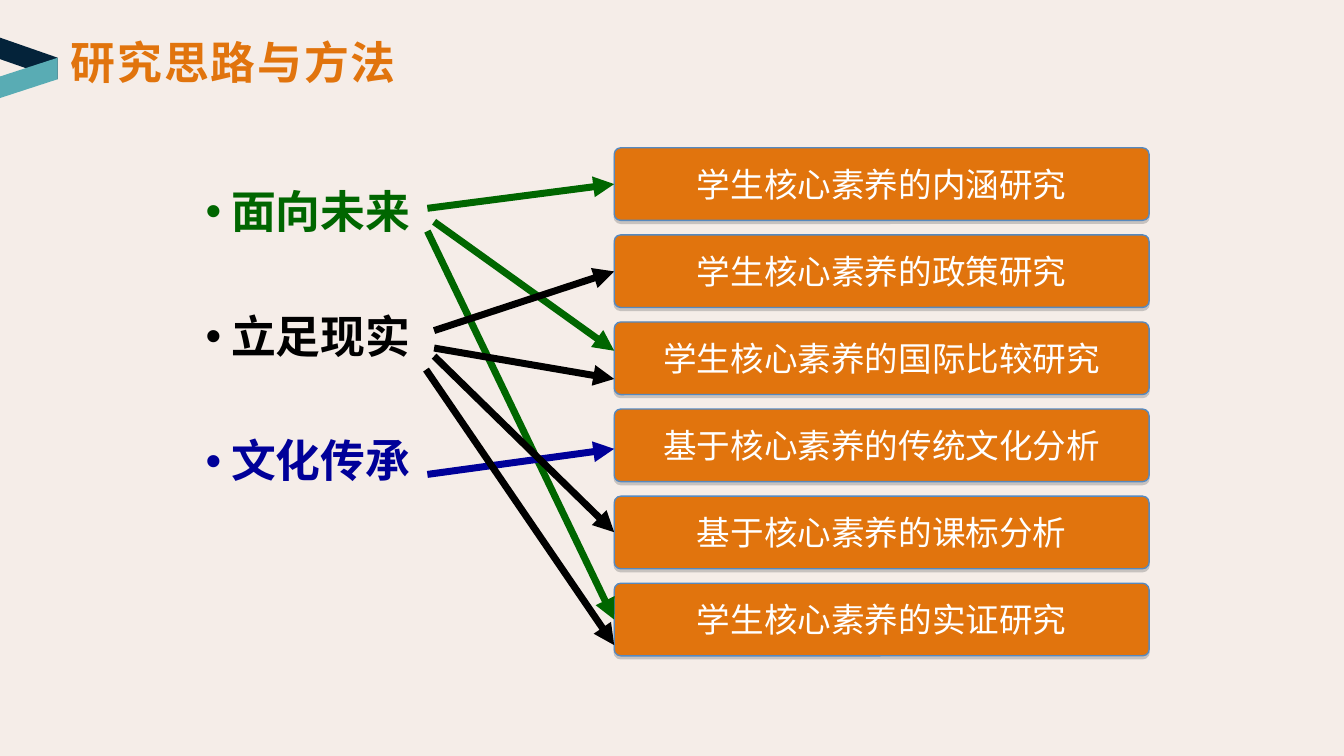
from lxml.etree import SubElement
from pptx import Presentation
from pptx.dml.color import RGBColor
from pptx.enum.shapes import MSO_CONNECTOR as Connector, MSO_SHAPE as Shape
from pptx.enum.text import MSO_ANCHOR as Anchor, MSO_AUTO_SIZE as AutoSize, PP_ALIGN as Align
from pptx.oxml.ns import qn
from pptx.util import Inches, Pt

COLORS = {
    "background": "F5EDE8", "orange": "E1740D", "outline": "5689BF",
    "shadow": "808080", "white": "FFFFFF", "navy": "04233A", "teal": "59ACB4",
    "future": "006600", "reality": "000000", "culture": "000099",
}
CJK_FONT = "Noto Sans CJK SC"
TITLE_FONT = "Times New Roman"


def rgb(name):
    return RGBColor.from_string(COLORS[name])


class SlideBuilder:
    def __init__(self, slide):
        self.slide = slide
        self.shapes = slide.shapes
        fill = slide.background.fill
        fill.solid()
        fill.fore_color.rgb = rgb("background")

    def run(self, paragraph, text, size, color, bold=False, font=CJK_FONT):
        run = paragraph.add_run()
        run.text = text
        run.font.size = Pt(size)
        run.font.bold = bold
        run.font.name = font
        run.font.color.rgb = rgb(color)
        SubElement(run.font._element, qn("a:ea"), typeface=CJK_FONT)
        return run

    def title(self, text, left, top, width, height):
        box = self.shapes.add_textbox(*map(Inches, (left, top, width, height)))
        frame = box.text_frame
        frame.word_wrap = False
        frame.auto_size = AutoSize.SHAPE_TO_FIT_TEXT
        run = self.run(frame.paragraphs[0], text, 24, "orange", True, TITLE_FONT)
        run.font._element.set("spc", "100")

    def bullets(self, items, left, top, width, height):
        box = self.shapes.add_textbox(*map(Inches, (left, top, width, height)))
        frame = box.text_frame
        frame.word_wrap = True
        frame.margin_left = frame.margin_right = Inches(0.07)
        frame.margin_top, frame.margin_bottom = Inches(0.55), Inches(0.04)
        for index, (text, color) in enumerate(items):
            paragraph = frame.add_paragraph() if index else frame.paragraphs[0]
            paragraph.line_spacing = 0.9
            paragraph.space_before = Pt(41 if index else 0)
            properties = paragraph._p.get_or_add_pPr()
            properties.set("marL", str(Inches(0.19)))
            properties.set("indent", str(-Inches(0.19)))
            SubElement(properties, qn("a:buFont"), typeface="Arial")
            SubElement(properties, qn("a:buChar"), char="•")
            self.run(paragraph, text, 24, color, True)

    def topic(self, text, left, top, width, height):
        shape = self.shapes.add_shape(
            Shape.ROUNDED_RECTANGLE, *map(Inches, (left, top, width, height)))
        shape.adjustments[0] = 0.09
        shape.fill.solid()
        shape.fill.fore_color.rgb = rgb("orange")
        shape.line.color.rgb = rgb("outline")
        shape.line.width = Pt(0.75)
        self.drop_shadow(shape)
        frame = shape.text_frame
        frame.word_wrap = False
        frame.vertical_anchor = Anchor.MIDDLE
        paragraph = frame.paragraphs[0]
        paragraph.alignment = Align.CENTER
        self.run(paragraph, text, 18, "white")

    def drop_shadow(self, shape):
        shape.shadow.inherit = False
        effects = shape._element.spPr.find(qn("a:effectLst"))
        shadow = SubElement(effects, qn("a:outerShdw"), blurRad="0",
                            dist=str(Pt(1.6)), dir="5400000", rotWithShape="0")
        color = SubElement(shadow, qn("a:srgbClr"), val=COLORS["shadow"])
        SubElement(color, qn("a:alpha"), val="38000")

    def arrow(self, color, start, end):
        connector = self.shapes.add_connector(
            Connector.STRAIGHT, *map(Inches, (*start, *end)))
        connector.line.color.rgb = rgb(color)
        connector.line.width = Pt(3.75)
        SubElement(connector.line._get_or_add_ln(), qn("a:tailEnd"), type="triangle")
        SubElement(connector._element.spPr, qn("a:effectLst"))

    def polygon(self, color, points):
        corners = [(Inches(x), Inches(y)) for x, y in points]
        builder = self.shapes.build_freeform(*corners[0])
        builder.add_line_segments(corners[1:], close=True)
        shape = builder.convert_to_shape()
        shape.shadow.inherit = False
        shape.fill.solid()
        shape.fill.fore_color.rgb = rgb(color)
        shape.line.fill.background()


def main():
    # Widescreen, 16 to 9
    presentation = Presentation()
    presentation.slide_width = Inches(10)
    presentation.slide_height = Inches(10) * 9 // 16
    builder = SlideBuilder(presentation.slides.add_slide(presentation.slide_layouts[6]))

    # Guiding principles
    builder.bullets([("面向未来", "future"), ("立足现实", "reality"),
                     ("文化传承", "culture")], 1.46, 0.86, 6.73, 4.55)

    # Research topics, evenly spaced
    topics = ["学生核心素养的内涵研究", "学生核心素养的政策研究",
              "学生核心素养的国际比较研究", "基于核心素养的传统文化分析",
              "基于核心素养的课标分析", "学生核心素养的实证研究"]
    topic_left, first_top, last_top = 4.57, 1.1, 4.34
    pitch = (last_top - first_top) / (len(topics) - 1)
    for index, text in enumerate(topics):
        builder.topic(text, topic_left, first_top + index * pitch, 3.98, 0.54)

    # Arrows from principles to topics: start point, end height
    arrows = {
        "future": [(3.23, 1.65, 2.61), (3.18, 1.72, 4.61), (3.18, 1.55, 1.37)],
        "culture": [(3.18, 3.53, 3.34)],
        "reality": [(3.23, 2.46, 2.02), (3.23, 2.65, 3.96),
                    (3.17, 2.75, 4.8), (3.23, 2.59, 2.82)],
    }
    for color, lines in arrows.items():
        for x, y, end_y in lines:
            builder.arrow(color, (x, y), (topic_left, end_y))

    # Title with its folded chevron
    builder.polygon("navy", [(0.43, 0.59), (0.43, 0.43), (0, 0.28), (0, 0.44)])
    builder.polygon("teal", [(0.43, 0.43), (0.43, 0.59), (0, 0.73), (0, 0.57)])
    builder.title("研究思路与方法", 0.43, 0.21, 2.66, 0.5)

    presentation.save("out.pptx")


if __name__ == "__main__":
    main()
